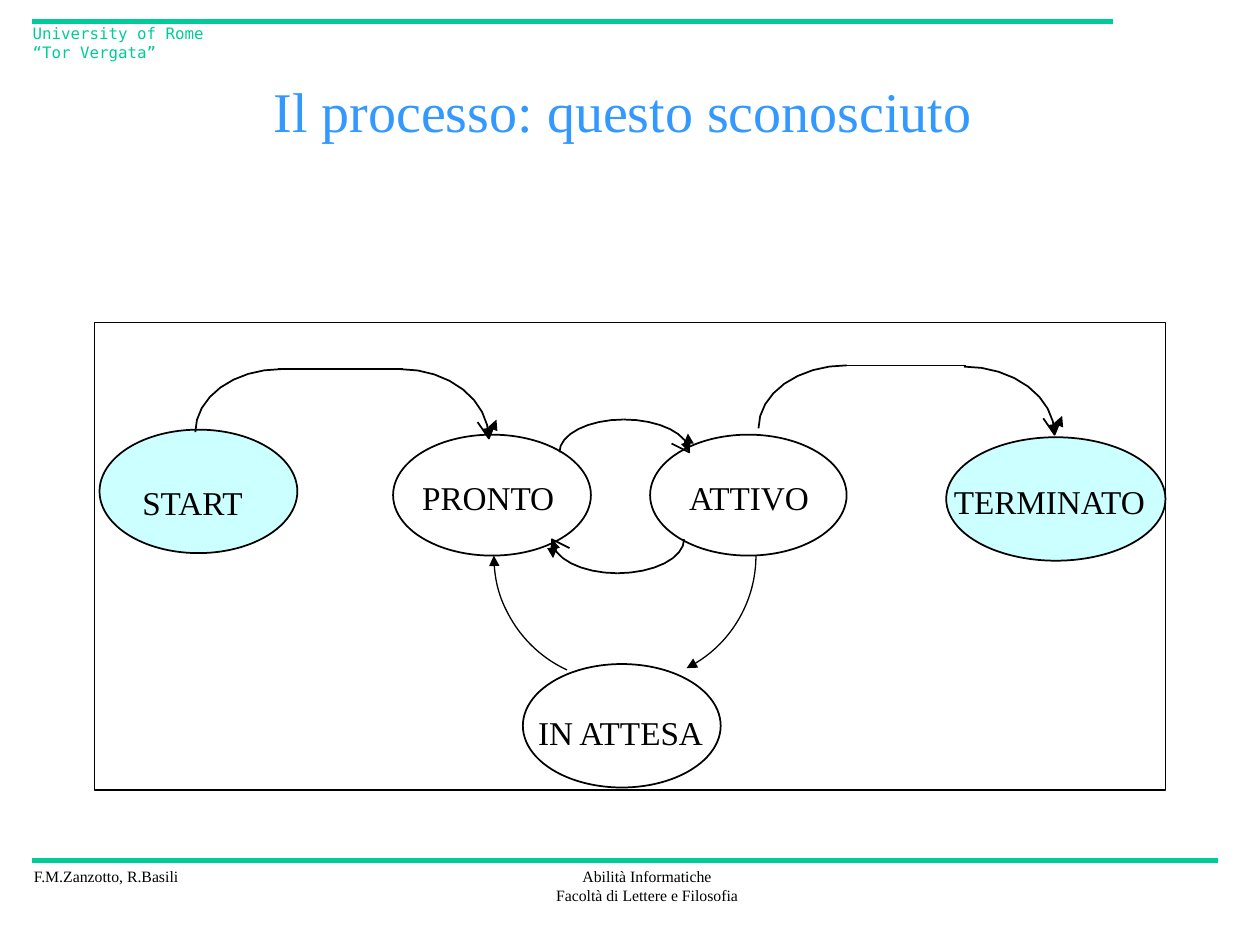
from math import copysign, cos, pi, sin

from lxml import etree
from pptx import Presentation
from pptx.dml.color import RGBColor
from pptx.enum.shapes import MSO_CONNECTOR, MSO_SHAPE
from pptx.enum.text import MSO_ANCHOR, MSO_AUTO_SIZE, PP_ALIGN
from pptx.oxml.ns import qn
from pptx.util import Inches, Pt

LEFT, CENTER = PP_ALIGN.LEFT, PP_ALIGN.CENTER
MIDDLE = MSO_ANCHOR.MIDDLE
FIT = MSO_AUTO_SIZE.SHAPE_TO_FIT_TEXT
STRAIGHT = MSO_CONNECTOR.STRAIGHT
RECTANGLE, OVAL, ARC = MSO_SHAPE.RECTANGLE, MSO_SHAPE.OVAL, MSO_SHAPE.ARC
COLORS = {"green": "00CC99", "blue": "3399FF", "cyan": "CCFFFF", "black": "000000"}
SERIF, MONO = "Times New Roman", "DejaVu Sans Mono"
TITLE_FONT = {"size": Pt(32), "name": SERIF}
LABEL_FONT = {"size": Pt(19), "name": SERIF}
FOOTER_FONT = {"size": Pt(9), "name": SERIF}
HEADER_FONT = {"size": Pt(9), "name": MONO}

TITLE = "Il processo: questo sconosciuto "
TITLE_PLACE = (0.75, 0.5, 8.5, 0.75)
RULES = [((0.25, 6.83), (9.67, 6.83)), ((0.25, 0.17), (8.83, 0.17))]
# lines, place, alignment, wrap, colour, font
MARGIN_TEXTS = [
    (["F.M.Zanzotto, R.Basili"], (0.17, 6.83, 1.36, 0.25), LEFT, False, "black", FOOTER_FONT),
    (["Abilità Informatiche", "Facoltà di Lettere e Filosofia"],
     (4.31, 6.83, 1.65, 0.4), CENTER, False, "black", FOOTER_FONT),
    (["University of Rome “Tor Vergata”"], (0.16, 0.14, 1.71, 0.25), LEFT, True,
     "green", HEADER_FONT),
]
FRAME = (0.75, 2.56, 8.5, 3.71)
# label, ellipse place, fill, label left, top and width
STATES = [
    ("START", (0.79, 3.41, 1.57, 0.98), "cyan", (1.13, 3.83, 0.94)),
    ("IN ATTESA", (4.15, 5.27, 1.57, 0.98), None, (4.27, 5.65, 1.41)),
    ("TERMINATO", (7.51, 3.47, 1.74, 0.98), "cyan", (7.57, 3.82, 1.6)),
    ("ATTIVO", (5.16, 3.45, 1.56, 0.96), None, (5.47, 3.79, 1.06)),
    ("PRONTO", (3.12, 3.45, 1.57, 0.96), None, (3.35, 3.79, 1.15)),
]
LABEL_HEIGHT = 0.35

# Barb arms, measured from the arrow tip back toward the apex of the curve
STEEP_BARB = [(0.09, 0.13), (-0.06, 0.15)]
SLANTED_BARB = [(0.14, 0.07), (0.01, 0.15)]
# A transition rises from its foot to an apex, runs flat, and turns down to its tip
TRANSITIONS = [
    {"name": "START to PRONTO", "foot": (1.55, 3.43), "rise_apex": (2.23, 2.93),
     "fall_apex": (3.18, 2.93), "tip": (3.88, 3.48), "barb": STEEP_BARB},
    {"name": "ATTIVO to TERMINATO", "foot": (6.02, 3.4), "rise_apex": (6.72, 2.9),
     "fall_apex": (7.65, 2.91), "tip": (8.37, 3.45), "barb": STEEP_BARB},
    {"name": "ATTIVO to PRONTO", "foot": (5.43, 4.28), "rise_apex": (4.9, 4.55),
     "fall_apex": (4.9, 4.55), "tip": (4.38, 4.28), "barb": SLANTED_BARB},
    {"name": "PRONTO to ATTIVO", "foot": (4.44, 3.59), "rise_apex": (4.95, 3.33),
     "fall_apex": (4.95, 3.33), "tip": (5.47, 3.59), "barb": SLANTED_BARB},
]
CURVE_STEPS = 8
BRIDGE_OVERLAP = 0.02

# centre, start and end angle in degrees, clockwise from the right
WAITING_ARCS = [
    ((5, 4.41), 0, 63.3),       # ATTIVO to IN ATTESA
    ((4.92, 4.41), 114.8, 180),  # IN ATTESA to PRONTO
]
ARC_RADIUS = 1
ARC_UNITS_PER_DEGREE = 0.6  # 60000 file units a degree, which python-pptx divides by 100000


def color(name):
    return RGBColor.from_string(COLORS[name])


def inches(values):
    return [Inches(value) for value in values]


def style_line(shape, width, name="black", arrow=False):
    shape.line.color.rgb = color(name)
    shape.line.width = Pt(width)
    if arrow:
        tail = etree.SubElement(shape.line._get_or_add_ln(), qn("a:tailEnd"))
        tail.set("type", "triangle")


def style_shape(shape, width, fill=None, arrow=False):
    shape.shadow.inherit = False
    if fill:
        shape.fill.solid()
        shape.fill.fore_color.rgb = color(fill)
    else:
        shape.fill.background()
    style_line(shape, width, arrow=arrow)


def add_line(page, start, end, width, name="black"):
    line = page.shapes.add_connector(STRAIGHT, *inches(start + end))
    style_line(line, width, name)
    etree.SubElement(line._element.spPr, qn("a:effectLst"))


def add_polyline(page, points, arrow=False):
    first, *rest = [inches(point) for point in points]
    builder = page.shapes.build_freeform(*first, scale=1.0)
    builder.add_line_segments(rest, close=False)
    style_shape(builder.convert_to_shape(), 1, arrow=arrow)


def quarter_ellipse(apex, end):
    """Return points that leave the apex horizontally and reach the end vertically."""
    angles = [pi / 2 * step / CURVE_STEPS for step in range(CURVE_STEPS + 1)]
    return [(apex[0] + (end[0] - apex[0]) * sin(angle),
             end[1] + (apex[1] - end[1]) * cos(angle)) for angle in angles]


def barb_points(apex, tip, arms):
    """Return an open arrowhead at the tip, mirrored so that it faces the apex."""
    side_x, side_y = (copysign(1, apex[axis] - tip[axis]) for axis in (0, 1))
    inner, outer = [(tip[0] + side_x * x, tip[1] + side_y * y) for x, y in arms]
    return [inner, tip, outer]


def add_transition(page, foot, rise_apex, fall_apex, tip, barb):
    add_polyline(page, quarter_ellipse(rise_apex, foot))
    add_polyline(page, quarter_ellipse(fall_apex, tip), arrow=True)
    add_polyline(page, barb_points(fall_apex, tip, barb), arrow=True)
    if rise_apex != fall_apex:
        level = rise_apex[1]
        add_line(page, (rise_apex[0] - BRIDGE_OVERLAP, level),
                 (fall_apex[0] + BRIDGE_OVERLAP, level), 1)


def add_waiting_arc(page, center, *angles):
    corner = [value - ARC_RADIUS for value in center]
    arc = page.shapes.add_shape(ARC, *inches(corner + [2 * ARC_RADIUS] * 2))
    for index, angle in enumerate(angles):
        arc.adjustments[index] = angle * ARC_UNITS_PER_DEGREE
    style_shape(arc, 0.75, arrow=True)


def write(frame, lines, alignment, name, font_format):
    for index, text in enumerate(lines):
        para = frame.paragraphs[0] if index == 0 else frame.add_paragraph()
        para.alignment = alignment
        span = para.add_run()
        span.text = text
        span.font.color.rgb = color(name)
        for key, value in font_format.items():
            setattr(span.font, key, value)


def add_text(page, lines, place, alignment, wrap, name, font_format, inset=None):
    frame = page.shapes.add_textbox(*inches(place)).text_frame
    frame.word_wrap = wrap
    frame.auto_size = FIT
    if inset is not None:
        for side in ("left", "top", "right", "bottom"):
            setattr(frame, f"margin_{side}", Inches(inset))
    write(frame, lines, alignment, name, font_format)


def add_title(page):
    title = page.shapes.title
    title.left, title.top, title.width, title.height = inches(TITLE_PLACE)
    title.text_frame.vertical_anchor = MIDDLE
    write(title.text_frame, [TITLE], CENTER, "blue", TITLE_FONT)


def add_diagram(page):
    style_shape(page.shapes.add_shape(RECTANGLE, *inches(FRAME)), 0.75)
    for _, place, fill, _ in STATES:
        style_shape(page.shapes.add_shape(OVAL, *inches(place)), 1, fill)
    for transition in TRANSITIONS:
        parts = {key: value for key, value in transition.items() if key != "name"}
        add_transition(page, **parts)
    for label, _, _, place in STATES:
        add_text(page, [label], place + (LABEL_HEIGHT,), LEFT, False, "black",
                 LABEL_FONT, inset=0)
    for arc in WAITING_ARCS:
        add_waiting_arc(page, *arc)


def main():
    deck = Presentation()
    deck.slide_width, deck.slide_height = inches((10, 7.5))
    page = deck.slides.add_slide(deck.slide_layouts[5])
    for start, end in RULES:
        add_line(page, start, end, 3, "green")
    for entry in MARGIN_TEXTS:
        add_text(page, *entry)
    add_title(page)
    add_diagram(page)
    deck.save("out.pptx")


if __name__ == "__main__":
    main()
